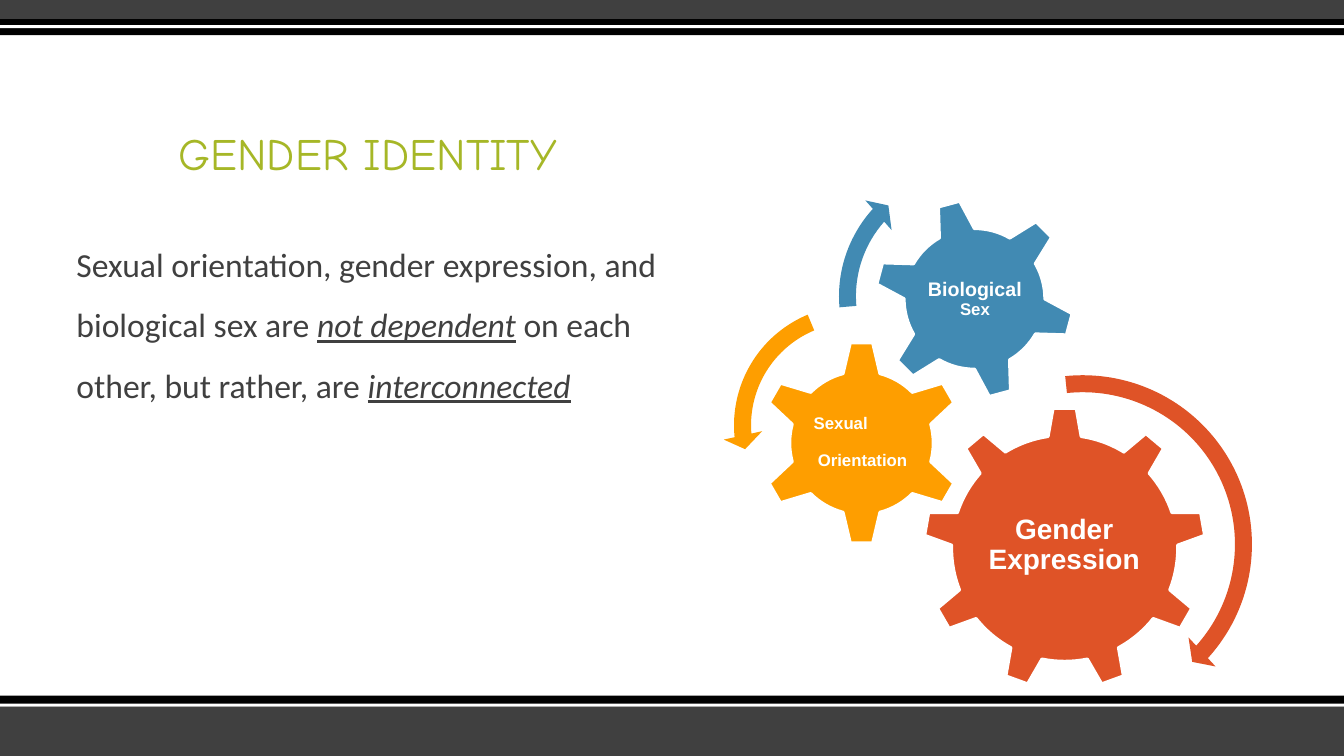
from pptx import Presentation
from pptx import util as u
from pptx.dml.color import RGBColor
from pptx.enum import shapes, text

GRAY = RGBColor(0x40, 0x40, 0x40)
BLACK = RGBColor(0, 0, 0)
WHITE = RGBColor(0xFF, 0xFF, 0xFF)
GREEN = RGBColor(0xA6, 0xB7, 0x27)
RED = RGBColor(0xDF, 0x53, 0x27)
GOLD = RGBColor(0xFE, 0x9E, 0x00)
BLUE = RGBColor(0x41, 0x8A, 0xB3)

KIND = shapes.MSO_SHAPE
ALIGN = text.PP_ALIGN
ANCHOR = text.MSO_ANCHOR
WIDE = 13.33


class Page:
    """Holds the text styles and the current slide."""

    styles = {
        "title": dict(name="Comic Neue", size=u.Pt(32), color=GREEN),
        "body": dict(name="Calibri", size=u.Pt(24), color=GRAY),
        "label": dict(name="Arial", size=u.Pt(20), color=WHITE, bold=True),
    }

    def __init__(self, slide):
        self.slide = slide

    def shape(self, kind, box, fill, edge=None, turn=0, adjust=()):
        item = self.slide.shapes.add_shape(kind, *map(u.Inches, box))
        item.shadow.inherit = False
        item.rotation = turn
        item.fill.solid()
        item.fill.fore_color.rgb = fill
        if edge is None:
            item.line.fill.background()
        else:
            item.line.color.rgb = edge
            item.line.width = u.Pt(2)
        for i, value in enumerate(adjust):
            item.adjustments[i] = value

    def bar(self, top, high, fill):
        self.shape(KIND.RECTANGLE, (0, top, WIDE, high), fill)

    def text(self, box, style, paras, anchor=ANCHOR.TOP, inset=None):
        """Each paragraph is (format dict, [(words, font changes), ...])."""
        frame = self.slide.shapes.add_textbox(*map(u.Inches, box)).text_frame
        frame.word_wrap = True
        frame.vertical_anchor = anchor
        if inset is not None:
            for side in ("left", "top", "right", "bottom"):
                setattr(frame, "margin_" + side, u.Inches(inset))
        for i, (form, runs) in enumerate(paras):
            para = frame.add_paragraph() if i else frame.paragraphs[0]
            for key, value in form.items():
                setattr(para, key, value)
            for words, change in runs:
                run = para.add_run()
                run.text = words
                for key, value in {**self.styles[style], **change}.items():
                    if key == "color":
                        run.font.color.rgb = value
                    else:
                        setattr(run.font, key, value)

    def gear(self, kind, box, fill, spot, paras, inset=0.02, turn=0):
        self.shape(kind, box, fill, WHITE, turn)
        self.text(spot, "label", paras, ANCHOR.MIDDLE, inset)


def main():
    deck = Presentation()
    deck.slide_width, deck.slide_height = u.Inches(WIDE), u.Inches(7.5)
    page = Page(deck.slides.add_slide(deck.slide_layouts[6]))

    # Bands along the bottom and top edges
    for top, high, fill in [
        (7, 0.5, GRAY), (6.9, 0.11, BLACK), (6.98, 0.03, WHITE),
        (0, 0.19, GRAY), (0.19, 0.16, BLACK), (0.25, 0.03, WHITE),
    ]:
        page.bar(top, high, fill)

    # Title and body
    page.text((1.67, 0.67, 10, 1.17), "title",
              [(dict(line_spacing=0.9), [("GENDER IDENTITY", {})])],
              ANCHOR.BOTTOM)
    stress = dict(italic=True, underline=True)
    page.text((0.66, 2.17, 6.42, 4.47), "body", [
        (dict(line_spacing=1.5, space_before=u.Pt(18)), [
            ("Sexual orientation, gender expression, and biological sex are ", {}),
            ("not dependent", stress),
            (" on each other, but rather, are ", {}),
            ("interconnected", stress),
        ])])

    # Gears with their labels
    mid = dict(alignment=ALIGN.CENTER, line_spacing=0.9)
    left = dict(mid, alignment=ALIGN.LEFT)
    small = dict(size=u.Pt(12))
    page.gear(KIND.GEAR_9, (9.16, 4.04, 2.8, 2.8), RED,
              (9.72, 4.69, 1.67, 1.44),
              [(mid, [("Gender Expression", {})])], inset=0.03)
    page.gear(KIND.GEAR_6, (7.53, 3.38, 2.03, 2.03), GOLD,
              (8.05, 3.89, 1.01, 1),
              [(left, [("Sexual", small)]),
               (dict(mid, space_before=u.Pt(13)), [("Orientation", small)])])
    page.gear(KIND.GEAR_6, (8.67, 1.97, 1.99, 1.99), BLUE,
              (9.11, 2.41, 1.12, 1.12),
              [(mid, [("Biological", dict(size=u.Pt(14))), (" Sex", small)])],
              turn=345)

    # Curved arrows around the gears
    for kind, box, fill, adjust in [
        (KIND.CIRCULAR_ARROW, (8.95, 3.61, 3.58, 3.58), RED,
         (0.047, 2.99, 25.26, 158.4, 0.055)),
        (KIND.LEFT_CIRCULAR_ARROW, (7.17, 2.92, 2.6, 2.6), GOLD,
         (0.065, 4.3, 104.89, 148.38, 0.075)),
        (KIND.CIRCULAR_ARROW, (8.21, 1.54, 2.8, 2.8), BLUE,
         (0.06, 3.94, 133.14, 105.08, 0.07)),
    ]:
        page.shape(kind, box, fill, adjust=adjust)

    deck.save("out.pptx")


if __name__ == "__main__":
    main()
